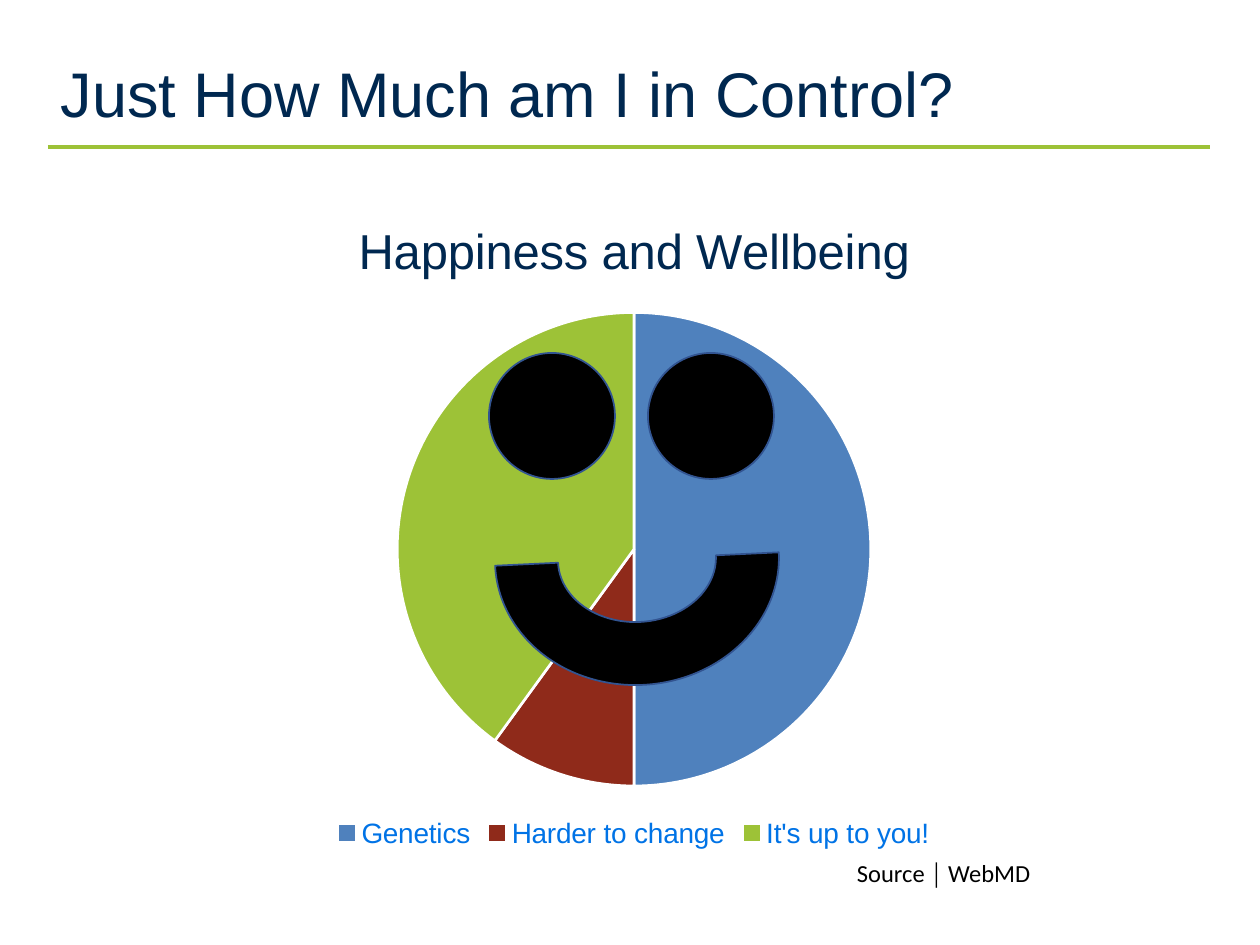
from dataclasses import dataclass
from typing import Any

from lxml import etree
from pptx import Presentation
from pptx.chart.data import CategoryChartData
from pptx.dml.color import RGBColor
from pptx.enum.chart import XL_CHART_TYPE, XL_LEGEND_POSITION
from pptx.enum.shapes import MSO_CONNECTOR, MSO_SHAPE
from pptx.enum.text import MSO_ANCHOR
from pptx.oxml.ns import qn
from pptx.util import Emu, Inches, Pt

PIE = XL_CHART_TYPE.PIE
BOTTOM = XL_LEGEND_POSITION.BOTTOM
STRAIGHT = MSO_CONNECTOR.STRAIGHT
OVAL = MSO_SHAPE.OVAL
BLOCK_ARC = MSO_SHAPE.BLOCK_ARC
MIDDLE = MSO_ANCHOR.MIDDLE
TOP = MSO_ANCHOR.TOP

PX = Inches(1) / 126
COLORS = {
    "navy": "002850",
    "green": "9DC237",
    "blue": "4F81BD",
    "red": "8F2A1A",
    "legend": "0073E6",
    "black": "000000",
    "outline": "325491",
    "white": "FFFFFF",
}


@dataclass
class Box:
    x: int
    y: int
    w: int
    h: int

    def emu(self) -> list[Emu]:
        return [px(v) for v in (self.x, self.y, self.w, self.h)]


@dataclass
class Feature:
    kind: Any
    box: Box
    rotation: float = 0


@dataclass
class Label:
    text: str
    box: Box
    font: dict[str, Any]
    color: str
    anchor: Any
    inset: tuple[int, int]
    wrap: bool


@dataclass
class Slice:
    name: str
    value: int
    color: str


def px(value: int) -> Emu:
    return Emu(round(value * PX))


def rgb(name: str) -> RGBColor:
    return RGBColor.from_string(COLORS[name])


def set_font(font: Any, formats: dict[str, Any], color: str) -> None:
    for name, value in formats.items():
        setattr(font, name, value)
    font.color.rgb = rgb(color)


def paint(item: Any, fill: str, line: str, width: float) -> None:
    item.fill.solid()
    item.fill.fore_color.rgb = rgb(fill)
    item.line.color.rgb = rgb(line)
    item.line.width = Pt(width)


def add_label(s: Any, label: Label) -> None:
    tf = s.shapes.add_textbox(*label.box.emu()).text_frame
    side, edge = (px(v) for v in label.inset)
    formats = {
        "word_wrap": label.wrap,
        "vertical_anchor": label.anchor,
        "margin_left": side,
        "margin_right": side,
        "margin_top": edge,
        "margin_bottom": edge,
    }
    for name, value in formats.items():
        setattr(tf, name, value)
    r = tf.paragraphs[0].add_run()
    r.text = label.text
    set_font(r.font, label.font, label.color)


def add_rule(s: Any, x1: int, x2: int, y: int) -> None:
    rule = s.shapes.add_connector(STRAIGHT, px(x1), px(y), px(x2), px(y))
    rule.line.color.rgb = rgb("green")
    rule.line.width = Pt(2)
    etree.SubElement(rule._element.spPr, qn("a:effectLst"))


def add_feature(s: Any, feature: Feature) -> None:
    sp = s.shapes.add_shape(feature.kind, *feature.box.emu())
    sp.shadow.inherit = False
    sp.rotation = feature.rotation
    paint(sp, "black", "outline", 1)


def add_pie(s: Any, box: Box, title: str, slices: list[Slice]) -> None:
    data = CategoryChartData()
    data.categories = [part.name for part in slices]
    data.add_series("Series 1", [part.value for part in slices])
    chart = s.shapes.add_chart(PIE, *box.emu(), data).chart
    set_font(chart.font, {"name": "Arial", "size": Pt(10)}, "navy")

    chart.has_title = True
    p = chart.chart_title.text_frame.paragraphs[0]
    r = p.add_run()
    r.text = title
    set_font(r.font, {"name": "Arial", "size": Pt(28), "bold": False}, "navy")
    chart.chart_title.include_in_layout = False

    chart.has_legend = True
    chart.legend.position = BOTTOM
    chart.legend.include_in_layout = False
    set_font(chart.legend.font, {"name": "Arial", "size": Pt(16)}, "legend")

    plot = chart.plots[0]
    plot.vary_by_categories = True
    for i, part in enumerate(slices):
        paint(plot.series[0].points[i].format, part.color, "white", 1.5)


EYE_SIZE = 126
EYE_LEFTS = (489, 648)
FACE = [Feature(OVAL, Box(x, 353, EYE_SIZE, EYE_SIZE)) for x in EYE_LEFTS]
FACE.append(Feature(BLOCK_ARC, Box(495, 433, 284, 252), 177.3))

SLICES = [
    Slice("Genetics", 50, "blue"),
    Slice("Harder to change", 10, "red"),
    Slice("It's up to you!", 40, "green"),
]
TITLE = Label("Just How Much am I in Control?", Box(48, 38, 1162, 109),
              {"name": "Arial", "size": Pt(36)}, "navy", MIDDLE, (13, 13), True)
SOURCE = Label("Source │ WebMD", Box(844, 852, 200, 43),
               {"name": "Calibri", "size": Pt(14)}, "black", TOP, (13, 6), False)


def main() -> None:
    prs = Presentation()
    prs.slide_width, prs.slide_height = Inches(10), Inches(7.5)
    s = prs.slides.add_slide(prs.slide_layouts[6])
    add_rule(s, 48, 1210, 147)
    add_label(s, TITLE)
    add_pie(s, Box(48, 192, 1172, 662), "Happiness and Wellbeing", SLICES)
    for feature in FACE:
        add_feature(s, feature)
    add_label(s, SOURCE)
    prs.save("out.pptx")


if __name__ == "__main__":
    main()
